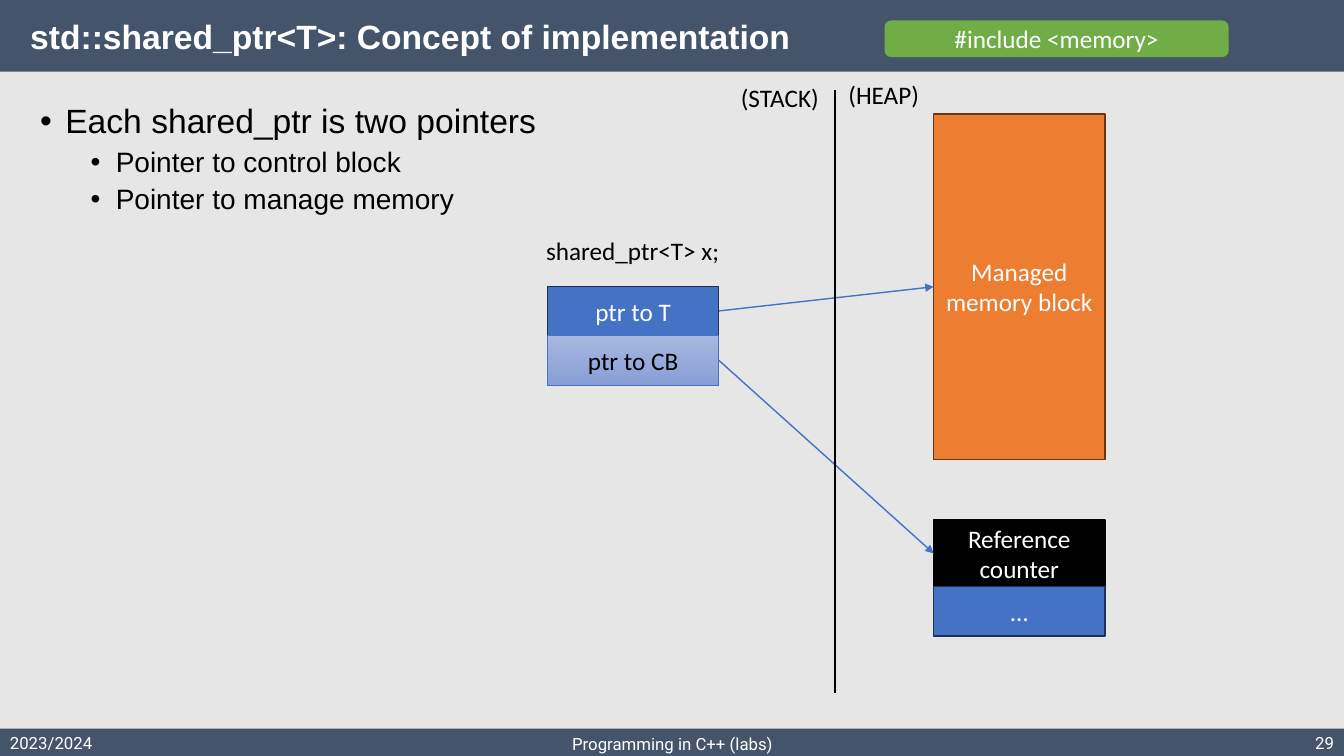
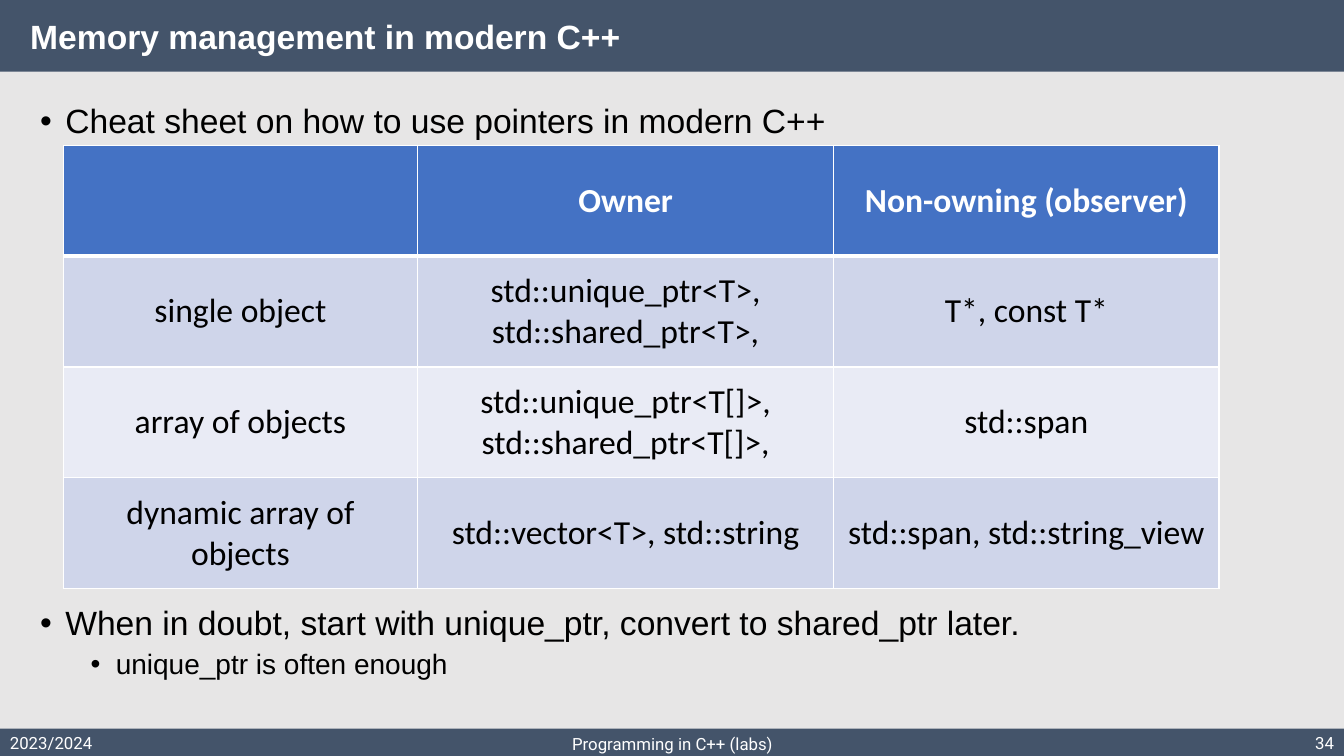
"""Build two lecture slides on smart pointers in C++."""
from dataclasses import dataclass

import lxml.etree
import pptx
import pptx.dml.color
import pptx.enum.dml
import pptx.enum.shapes
import pptx.enum.text
import pptx.oxml.ns
import pptx.util

Inches = pptx.util.Inches
Pt = pptx.util.Pt
Align = pptx.enum.text.PP_ALIGN
Anchor = pptx.enum.text.MSO_ANCHOR
Form = pptx.enum.shapes.MSO_SHAPE
Link = pptx.enum.shapes.MSO_CONNECTOR


@dataclass(frozen=True)
class Theme:
    band: str = "44546A"
    page: str = "E7E6E6"
    white: str = "FFFFFF"
    black: str = "000000"
    blue: str = "4472C4"
    navy: str = "1E3256"
    orange: str = "ED7D31"
    brown: str = "683715"
    green: str = "70AD47"
    fade: tuple = ("A8B7DF", "889ED7")
    rows: tuple = ("CFD5EA", "E9EBF5")
    head: str = "Arial"
    body: str = "Calibri"
    foot: str = "Roboto"
    large: int = 24
    mid: int = 20
    label: int = 18
    small: int = 12
    wide: float = 13.33
    high: float = 7.5


T = Theme()


def color(code):
    return pptx.dml.color.RGBColor.from_string(code)


def node(parent, tag, **attrs):
    name = pptx.oxml.ns.qn("a:" + tag)
    return lxml.etree.SubElement(parent, name, **attrs)


def write(para, text, font, size, ink, bold=False, align=Align.LEFT):
    para.alignment = align
    if text:
        run = para.add_run()
        run.text = text
        run.font.name = font
        run.font.size = Pt(size)
        run.font.color.rgb = color(ink)
        run.font.bold = bold


def frame(slide, x, y, w, h):
    area = slide.shapes.add_textbox(Inches(x), Inches(y), Inches(w), Inches(h))
    area.text_frame.word_wrap = True
    return area.text_frame


def label(slide, text, x, y, w=2.13, h=0.4, align=Align.CENTER,
          font=T.body, size=T.label, ink=T.black):
    write(frame(slide, x, y, w, h).paragraphs[0], text, font, size, ink, align=align)


def panel(slide, x, y, w, h, fill, edge=None, thick=1, form=Form.RECTANGLE):
    shape = slide.shapes.add_shape(form, Inches(x), Inches(y), Inches(w), Inches(h))
    shape.shadow.inherit = False
    if isinstance(fill, tuple):
        shape.fill.gradient()
        shape.fill.gradient_angle = 270
        for stop, code in zip(shape.fill.gradient_stops, fill):
            stop.color.rgb = color(code)
    else:
        shape.fill.solid()
        shape.fill.fore_color.rgb = color(fill)
    if edge:
        shape.line.color.rgb = color(edge)
        shape.line.width = Pt(thick)
    else:
        shape.line.fill.background()
    return shape


def block(slide, text, *place, ink=T.white, **style):
    shape = panel(slide, *place, **style)
    text_frame = shape.text_frame
    text_frame.word_wrap = True
    text_frame.vertical_anchor = Anchor.MIDDLE
    write(text_frame.paragraphs[0], text, T.body, T.label, ink, align=Align.CENTER)
    return shape


def stroke(slide, start, end, ink, thick):
    ends = [Inches(value) for value in (*start, *end)]
    line = slide.shapes.add_connector(Link.STRAIGHT, *ends)
    line.line.color.rgb = color(ink)
    line.line.width = Pt(thick)
    node(line._element.spPr, "effectLst")
    return line


def arrow(slide, source, target):
    line = stroke(slide, (0, 0), (1, 1), T.blue, 1)
    line.begin_connect(source, 3)
    line.end_connect(target, 1)
    node(line.line._get_or_add_ln(), "tailEnd", type="triangle")


def bullets(slide, y, h, items):
    text_frame = frame(slide, 0.3, y, 12.63, h)
    for index, (level, text) in enumerate(items):
        para = text_frame.add_paragraph() if index else text_frame.paragraphs[0]
        write(para, text, T.head, T.mid if level else T.large, T.black)
        para.level = level
        para.line_spacing = 0.9
        para.space_before = Pt(5 if level else 10)
        props = para._p.get_or_add_pPr()
        props.set("marL", str(Inches(0.25 + 0.5 * level)))
        props.set("indent", str(-Inches(0.25)))
        node(props, "buFont", typeface=T.head)
        node(props, "buChar", char="•")


def border(cell, **sides):
    props = cell._tc.get_or_add_tcPr()
    for side, thick in sides.items():
        line = node(props, "ln" + side, w=str(Pt(thick)))
        node(node(line, "solidFill"), "srgbClr", val=T.white)


def grid(slide, x, y, widths, height, data):
    size = Inches(sum(widths)), Inches(height * len(data))
    table = slide.shapes.add_table(
        len(data), len(widths), Inches(x), Inches(y), *size).table
    for column, width in zip(table.columns, widths):
        column.width = Inches(width)
    for index, texts in enumerate(data):
        table.rows[index].height = Inches(height)
        head = index == 0
        fill = T.blue if head else T.rows[(index - 1) % 2]
        for cell, text in zip(table.rows[index].cells, texts):
            border(cell, L=1, R=1, T=3 if index == 1 else 1, B=3 if head else 1)
            cell.fill.solid()
            cell.fill.fore_color.rgb = color(fill)
            cell.vertical_anchor = Anchor.MIDDLE
            write(cell.text_frame.paragraphs[0], text, T.body, T.large,
                  T.white if head else T.black, head, Align.CENTER)


def base(deck, title, number):
    slide = deck.slides.add_slide(deck.slide_layouts[6])
    slide.background.fill.solid()
    slide.background.fill.fore_color.rgb = color(T.page)
    panel(slide, 0, 7.23, T.wide, 0.27, T.band)
    text_frame = panel(slide, 0, 0, T.wide, 0.71, T.band).text_frame
    text_frame.word_wrap = True
    text_frame.vertical_anchor = Anchor.TOP
    text_frame.margin_left = Inches(0.3)
    text_frame.margin_top = Inches(0.2)
    para = text_frame.paragraphs[0]
    para.line_spacing = 0.9
    write(para, title, T.head, T.large, T.white, bold=True)
    for text, x, y, width, align in (
        ("2023/2024", 0, 7.22, 3, Align.LEFT),
        ("Programming in C++ (labs)", 4.42, 7.23, 4.5, Align.CENTER),
        (str(number), 10.33, 7.22, 3, Align.RIGHT),
    ):
        label(slide, text, x, y, width, 0.27, align, T.foot, T.small, T.white)
    return slide


def concept(deck):
    slide = base(deck, "std::shared_ptr<T>: Concept of implementation", 29)
    bullets(slide, 0.99, 1.3, [
        (0, "Each shared_ptr is two pointers"),
        (1, "Pointer to control block"),
        (1, "Pointer to manage memory"),
    ])
    block(slide, "#include <memory>", 8.78, 0.21, 3.4, 0.35,
          fill=T.green, edge=T.green, form=Form.ROUNDED_RECTANGLE)
    stack, heap, width, row = 5.43, 9.26, 1.7, 0.49
    first = block(slide, "ptr to T", stack, 2.84, width, row,
                  fill=T.blue, edge=T.navy)
    second = block(slide, "ptr to CB", stack, 2.84 + row, width, row,
                   fill=T.fade, edge=T.blue, thick=0.5, ink=T.black)
    memory = block(slide, "Managed memory block", heap, 1.13, width, 3.43,
                   fill=T.orange, edge=T.brown)
    count = block(slide, "Reference counter", heap, 5.16, width, 0.66,
                  fill=T.black, edge=T.black)
    block(slide, "…", heap, 5.82, width, row, fill=T.blue, edge=T.navy)
    arrow(slide, second, count)
    arrow(slide, first, memory)
    stroke(slide, (8.28, 0.89), (8.28, 6.88), T.black, 1.5)
    label(slide, "shared_ptr<T> x;", 5.21, 2.29)
    label(slide, "(HEAP)", 7.7, 0.74)
    label(slide, "(STACK)", 6.67, 0.77)


def cheats(deck):
    slide = base(deck, "Memory management in modern C++", 34)
    bullets(slide, 0.99, 0.45, [
        (0, "Cheat sheet on how to use pointers in modern C++"),
    ])
    grid(slide, 0.63, 1.44, (3.51, 4.13, 3.82), 1.1, [
        ("", "Owner", "Non-owning (observer)"),
        ("single object", "std::unique_ptr<T>, std::shared_ptr<T>,",
         "T*, const T*"),
        ("array of objects", "std::unique_ptr<T[]>, std::shared_ptr<T[]>,",
         "std::span"),
        ("dynamic array of objects", "std::vector<T>, std::string",
         "std::span, std::string_view"),
    ])
    bullets(slide, 5.97, 0.96, [
        (0, "When in doubt, start with unique_ptr, convert to shared_ptr later."),
        (1, "unique_ptr is often enough"),
    ])


def main():
    deck = pptx.Presentation()
    deck.slide_width = Inches(T.wide)
    deck.slide_height = Inches(T.high)
    concept(deck)
    cheats(deck)
    deck.save("out.pptx")


if __name__ == "__main__":
    main()
